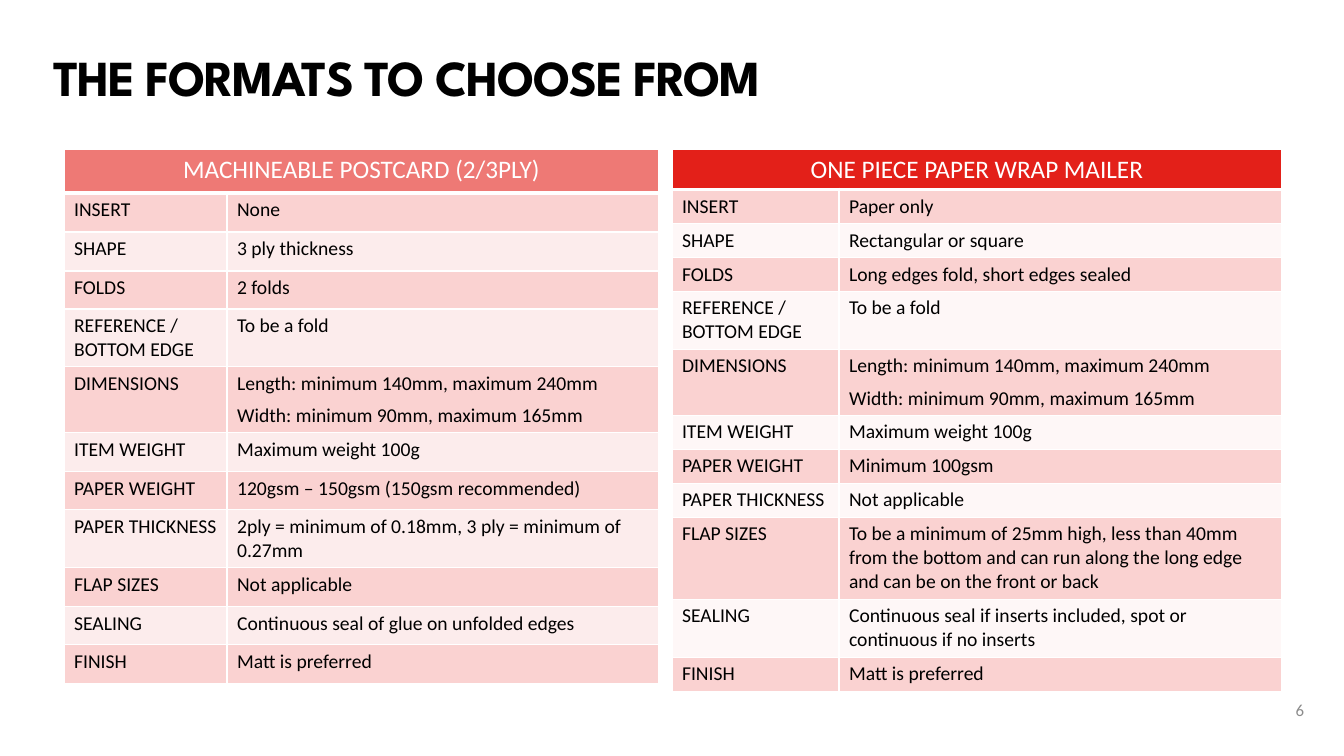
from itertools import pairwise

from lxml.etree import SubElement
from pptx import Presentation
from pptx.dml.color import RGBColor
from pptx.enum.text import MSO_ANCHOR, PP_ALIGN
from pptx.oxml.ns import qn
from pptx.util import Emu, Pt

SCALE = 914400 / 100.8
SLIDE_SIZE = (1344, 756)
TITLE = "THE FORMATS TO CHOOSE FROM"
TITLE_AREA = (53, 45, 1110, 52)
PAGE_NUMBER = "6"
NUMBER_AREA = (1273, 690, 41, 40)
BAND = "FAD2D1"
LABELS = ["INSERT", "SHAPE", "FOLDS", "REFERENCE / BOTTOM EDGE", "DIMENSIONS",
          "ITEM WEIGHT", "PAPER WEIGHT", "PAPER THICKNESS", "FLAP SIZES",
          "SEALING", "FINISH"]
DIMENSIONS = ["Length: minimum 140mm, maximum 240mm",
              "Width: minimum 90mm, maximum 165mm"]
FORMATS = [
    {
        "heading": "ONE PIECE PAPER WRAP MAILER",
        "heading_fill": "E32019",
        "alternate": "FEF7F7",
        "column_edges": [672, 839, 1282],
        "row_edges": [149, 189, 223, 257, 291, 349, 415, 449, 483, 517, 599, 657, 691],
        "values": [
            ["Paper only"],
            ["Rectangular or square"],
            ["Long edges fold, short edges sealed"],
            ["To be a fold"],
            DIMENSIONS,
            ["Maximum weight 100g"],
            ["Minimum 100gsm"],
            ["Not applicable"],
            ["To be a minimum of 25mm high, less than 40mm from the bottom "
             "and can run along the long edge and can be on the front or back"],
            ["Continuous seal if inserts included, spot or continuous if no inserts"],
            ["Matt is preferred"],
        ],
    },
    {
        "heading": "MACHINEABLE POSTCARD (2/3PLY)",
        "heading_fill": "EE7975",
        "alternate": "FCECEC",
        "column_edges": [64, 227, 659],
        "row_edges": [149, 193, 232, 271, 309, 367, 433, 472, 510, 568, 607, 645, 684],
        "values": [
            ["None"],
            ["3 ply thickness"],
            ["2 folds"],
            ["To be a fold"],
            DIMENSIONS,
            ["Maximum weight 100g"],
            ["120gsm – 150gsm (150gsm recommended)"],
            ["2ply = minimum of 0.18mm, 3 ply = minimum of 0.27mm"],
            ["Not applicable"],
            ["Continuous seal of glue on unfolded edges"],
            ["Matt is preferred"],
        ],
    },
]
TITLE_FONT = {"name": "League Spartan", "size": Pt(36), "bold": True}
HEADING_FONT = {"name": "Calibri", "size": Pt(18), "bold": False}
CELL_FONT = {"name": "Calibri", "size": Pt(14), "bold": False}
NUMBER_FONT = {"name": "Calibri", "size": Pt(12)}


def px(length):
    return Emu(round(length * SCALE))


def color(value):
    return RGBColor.from_string(value)


def apply(target, values):
    for name, value in values.items():
        setattr(target, name, value)


def write(frame, lines, font, ink, **layout):
    for index, line in enumerate(lines):
        para = frame.paragraphs[0] if index == 0 else frame.add_paragraph()
        span = para.add_run()
        span.text = line
        apply(para, layout)
        apply(span.font, font)
        span.font.color.rgb = color(ink)


def paint_cell(cell, fill, bottom_width):
    properties = cell._tc.get_or_add_tcPr()
    for side, width in {"L": 1, "R": 1, "T": 1, "B": bottom_width}.items():
        border = SubElement(properties, qn(f"a:ln{side}"), w=str(Pt(width)))
        solid = SubElement(border, qn("a:solidFill"))
        SubElement(solid, qn("a:srgbClr"), val="FFFFFF")
    cell.fill.solid()
    cell.fill.fore_color.rgb = color(fill)


def add_title(page):
    box = page.shapes.title
    apply(box, dict(zip(("left", "top", "width", "height"), map(px, TITLE_AREA))))
    frame = box.text_frame
    apply(frame, {"margin_left": 0, "margin_top": 0, "margin_right": 0,
                  "margin_bottom": 0, "word_wrap": True,
                  "vertical_anchor": MSO_ANCHOR.TOP})
    write(frame, [TITLE], TITLE_FONT, "000000",
          alignment=PP_ALIGN.LEFT, line_spacing=Pt(44))
    frame.paragraphs[0].runs[0].font._element.set("spc", "-100")


def add_page_number(page):
    frame = page.shapes.add_textbox(*map(px, NUMBER_AREA)).text_frame
    apply(frame, {"word_wrap": True, "vertical_anchor": MSO_ANCHOR.MIDDLE})
    write(frame, [PAGE_NUMBER], NUMBER_FONT, "8C8C8C", alignment=PP_ALIGN.RIGHT)


def add_format_table(page, item):
    columns, rows = item["column_edges"], item["row_edges"]
    area = (columns[0], rows[0], columns[-1] - columns[0], rows[-1] - rows[0])
    table = page.shapes.add_table(len(rows) - 1, len(columns) - 1,
                                  *map(px, area)).table
    apply(table, {"first_row": False, "horz_banding": False})
    for column, (start, end) in zip(table.columns, pairwise(columns)):
        column.width = px(end - start)
    for row, (start, end) in zip(table.rows, pairwise(rows)):
        row.height = px(end - start)

    for cell in table.rows[0].cells:
        paint_cell(cell, item["heading_fill"], 3)
    heading = table.cell(0, 0)
    heading.merge(table.cell(0, 1))
    write(heading.text_frame, [item["heading"]], HEADING_FONT, "FFFFFF",
          alignment=PP_ALIGN.CENTER)

    for number, (label, lines) in enumerate(zip(LABELS, item["values"]), 1):
        fill = BAND if number % 2 else item["alternate"]
        for cell, content in zip(table.rows[number].cells, ([label], lines)):
            paint_cell(cell, fill, 1)
            write(cell.text_frame, content, CELL_FONT, "000000",
                  space_after=Pt(6 if len(content) > 1 else 0))


def main():
    deck = Presentation()
    deck.slide_width, deck.slide_height = map(px, SLIDE_SIZE)
    page = deck.slides.add_slide(deck.slide_layouts[5])
    add_title(page)
    add_page_number(page)
    for item in FORMATS:
        add_format_table(page, item)
    deck.save("out.pptx")


if __name__ == "__main__":
    main()
